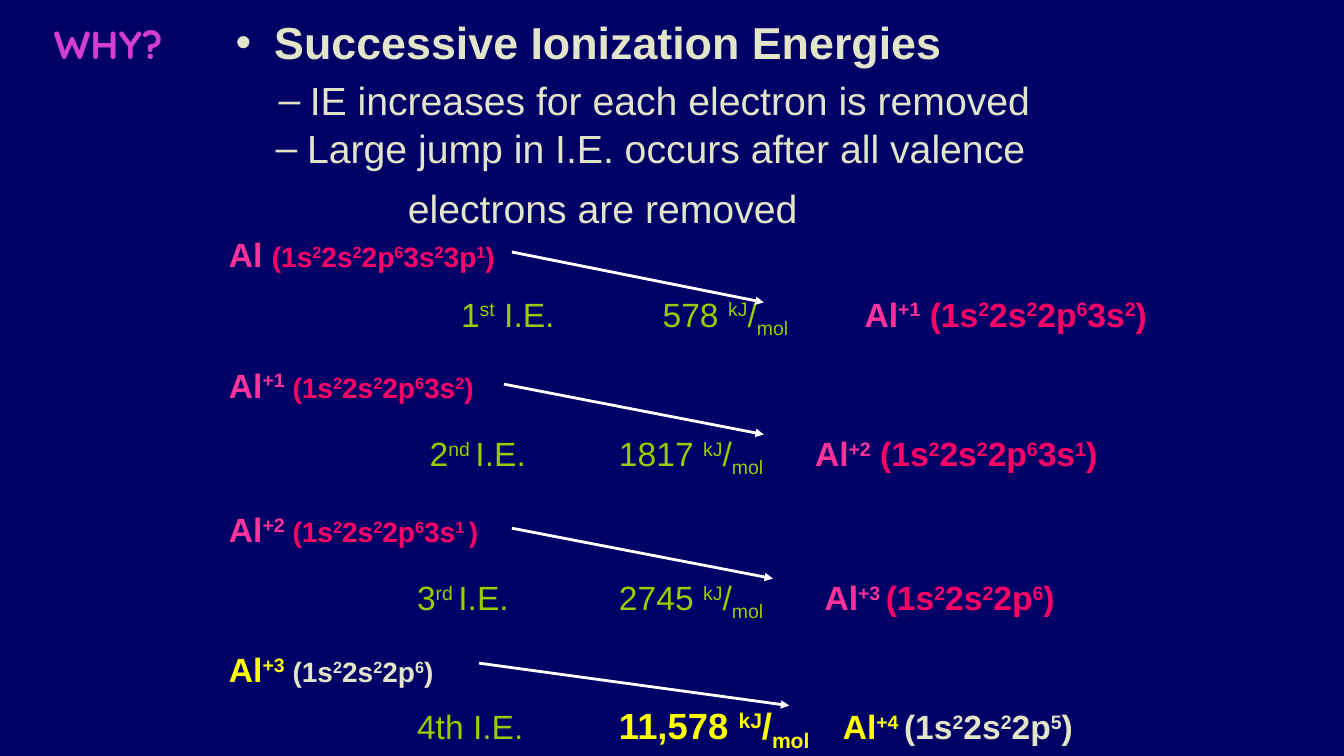
from dataclasses import dataclass

from lxml import etree
from pptx import Presentation
from pptx.dml.color import RGBColor
from pptx.enum.shapes import MSO_CONNECTOR
from pptx.enum.text import MSO_ANCHOR, MSO_AUTO_SIZE, PP_ALIGN
from pptx.oxml.ns import qn
from pptx.util import Cm, Pt

STRAIGHT = MSO_CONNECTOR.STRAIGHT
TOP = MSO_ANCHOR.TOP
LEFT = PP_ALIGN.LEFT
FIXED_SIZE = MSO_AUTO_SIZE.NONE


@dataclass(frozen=True)
class Theme:
    background: str = "000066"
    cream: str = "E3E5C9"
    green: str = "99CC00"
    pink: str = "FF3399"
    red: str = "FF0066"
    yellow: str = "FFFF00"
    purple: str = "D53DD0"
    white: str = "FFFFFF"
    heading: int = 32
    point: int = 28
    jump: int = 26
    row: int = 24
    small: int = 20
    font: str = "Arial"
    label_font: str = "Quicksand"


theme = Theme()
ASCENT = 0.905  # share of the type size above the baseline
SCRIPTS = {"^": "30000", "_": "-25000"}

presentation = Presentation()
presentation.slide_width = Cm(33.87)
presentation.slide_height = Cm(19.05)
slide = presentation.slides.add_slide(presentation.slide_layouts[5])
slide.background.fill.solid()
slide.background.fill.fore_color.rgb = RGBColor.from_string(theme.background)


def place_line(left, baseline, width, parts, bullet="", hang=0, shape=None, font=theme.font):
    """Put one line on a baseline (in cm); parts are (markup, size, colour, bold).

    In the markup, | separates runs; ^ starts a superscript and _ a subscript.
    """
    size = max(part[1] for part in parts)
    shape = shape or slide.shapes.add_textbox(0, 0, 0, 0)
    shape.left, shape.width = Cm(left), Cm(width)
    shape.top = Cm(baseline) - int(Pt(size) * ASCENT)
    shape.height = int(Pt(size) * 1.15)
    frame = shape.text_frame
    frame.margin_left = frame.margin_right = frame.margin_top = frame.margin_bottom = 0
    frame.word_wrap = True
    frame.auto_size = FIXED_SIZE
    frame.vertical_anchor = TOP
    paragraph = frame.paragraphs[0]
    paragraph.alignment = LEFT
    if bullet:
        properties = paragraph._p.get_or_add_pPr()
        properties.set("marL", str(Cm(hang)))
        properties.set("indent", str(-Cm(hang)))
        etree.SubElement(properties, qn("a:buFont")).set("typeface", theme.font)
        etree.SubElement(properties, qn("a:buChar")).set("char", bullet)
    for markup, part_size, color, bold in parts:
        for piece in markup.split("|"):
            script = SCRIPTS.get(piece[0])
            run = paragraph.add_run()
            run.text = piece[1:] if script else piece
            run.font.name = font
            run.font.size = Pt(part_size)
            run.font.bold = bold
            run.font.color.rgb = RGBColor.from_string(color)
            if script:
                run._r.get_or_add_rPr().set("baseline", script)


# Heading and points
place_line(5.94, 1.4, 23.5, [("Successive Ionization Energies", theme.heading, theme.cream, True)],
           bullet="•", hang=0.97, shape=slide.shapes.title)
place_line(1.35, 1.4, 4, [("WHY?", theme.point, theme.purple, True)], font=theme.label_font)
points = [
    (7.02, 2.82, "IE increases for each electron is removed", "–"),
    (6.95, 4.03, "Large jump in I.E. occurs after all valence", "–"),
    (10.28, 5.54, "electrons are removed", ""),
]
for left, baseline, text, bullet in points:
    place_line(left, baseline, 21, [(text, theme.point, theme.cream, False)],
               bullet=bullet, hang=0.79)

# Starting ions: baseline, ion, configuration, ion colour, configuration colour
starts = [
    (6.65, "Al ", "(1s|^2|2s|^2|2p|^6|3s|^2|3p|^1|)", theme.pink, theme.red),
    (9.95, "Al|^+1", " (1s|^2|2s|^2|2p|^6|3s|^2|)", theme.pink, theme.red),
    (13.58, "Al|^+2", " (1s|^2|2s|^2|2p|^6|3s|^1 |)", theme.pink, theme.red),
    (17.11, "Al|^+3", " (1s|^2|2s|^2|2p|^6|)", theme.yellow, theme.cream),
]
for baseline, ion, configuration, ion_color, configuration_color in starts:
    place_line(5.77, baseline, 8, [(ion, theme.row, ion_color, True),
                                   (configuration, theme.small, configuration_color, True)])

# Ionization steps: baseline, then left edge and text of step, energy and product
steps = [
    (8.16, 11.62, "1|^st| I.E.", 16.7, "578", 21.79, "Al|^+1", " (1s|^2|2s|^2|2p|^6|3s|^2|)"),
    (11.67, 10.83, "2|^nd |I.E.", 15.6, "1817", 20.54, "Al|^+2", " (1s|^2|2s|^2|2p|^6|3s|^1|)"),
    (15.3, 10.51, "3|^rd |I.E.", 15.6, "2745", 20.78, "Al|^+3 ", "(1s|^2|2s|^2|2p|^6|)"),
    (18.55, 10.51, "4th I.E.", 15.6, "11,578", 21.24, "Al|^+4 ", "(1s|^2|2s|^2|2p|^5|)"),
]
for step in steps:
    baseline, step_left, name, energy_left, energy, ion_left, ion, configuration = step
    is_jump = step is steps[-1]
    energy_size = theme.jump if is_jump else theme.row
    energy_color = theme.yellow if is_jump else theme.green
    ion_color = theme.yellow if is_jump else theme.pink
    configuration_color = theme.cream if is_jump else theme.red
    place_line(step_left, baseline, 4, [(name, theme.row, theme.green, False)])
    place_line(energy_left, baseline, 5.2,
               [(energy + " |^kJ|/|_mol", energy_size, energy_color, is_jump)])
    place_line(ion_left, baseline, 9, [(ion, theme.row, ion_color, True),
                                       (configuration, theme.row, configuration_color, True)])

# Arrows from each starting ion to its product
arrows = [
    (12.9, 6.35, 19.25, 7.62),
    (12.7, 9.68, 19.25, 10.95),
    (12.9, 13.31, 19.48, 14.58),
    (12.07, 16.71, 19.89, 17.78),
]
for ends in arrows:
    arrow = slide.shapes.add_connector(STRAIGHT, *(Cm(value) for value in ends))
    arrow.line.color.rgb = RGBColor.from_string(theme.white)
    arrow.line.width = Pt(2)
    etree.SubElement(arrow.line._get_or_add_ln(), qn("a:tailEnd")).set("type", "triangle")
    etree.SubElement(arrow._element.spPr, qn("a:effectLst"))

presentation.save("out.pptx")
